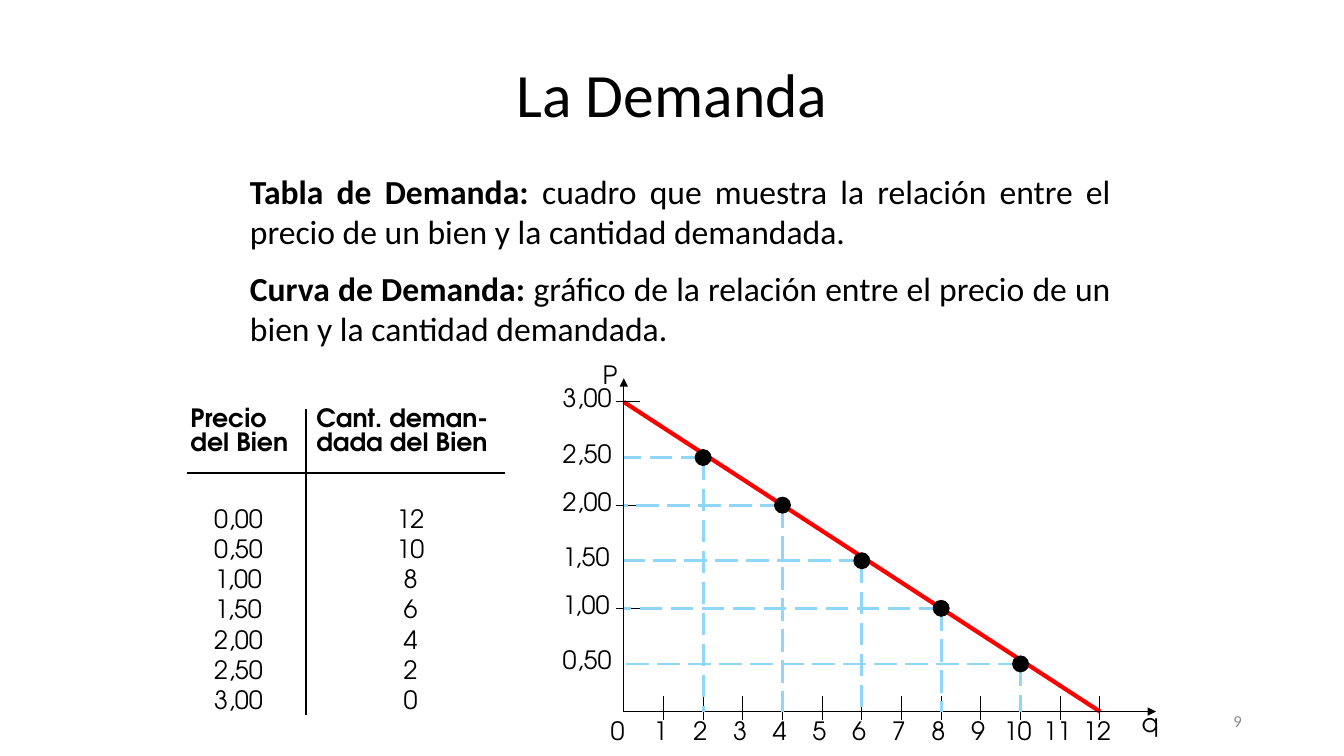
from pptx import Presentation, util as u
from pptx.dml.color import RGBColor
from pptx.enum import shapes, text
from pptx.enum.dml import MSO_LINE
from pptx.oxml.ns import qn
from lxml import etree

TITLE = "La Demanda"
DEFINITIONS = [
    [("Tabla de Demanda: ", True),
     ("cuadro que muestra la relación entre el precio de un bien y la cantidad demandada.", False)],
    [("Curva de Demanda: ", True),
     ("gráfico de la relación entre el precio de un bien y la cantidad demandada.", False)],
]
HEADER = ("Precio del Bien", "Cant. deman-dada del Bien")
DEMAND = [(0, 12), (0.5, 10), (1, 8), (1.5, 6), (2, 4), (2.5, 2), (3, 0)]
PAGE = "9"

BLACK, RED, BLUE, GREY = "000000", "FF0000", "8FD6F9", "8C8C8C"
SANS, GEOMETRIC = "Calibri", "TeX Gyre Adventor"
ALIGN, ANCHOR = text.PP_ALIGN, text.MSO_ANCHOR
X0, Y0, X_UNIT, Y_UNIT = 15.72, 17.93, 1, 2.6
MAX_Q = 12

prs = Presentation()
prs.slide_width, prs.slide_height = u.Cm(33.87), u.Cm(19.05)
s = prs.slides.add_slide(prs.slide_layouts[6])


def color(value):
    return RGBColor.from_string(value)


def money(price):
    return f"{price:.2f}".replace(".", ",")


def write(tf, paragraphs, size=18, font=GEOMETRIC, fill=BLACK, align=ALIGN.LEFT,
          bold=False, gap=0, tabs=()):
    if isinstance(paragraphs, str):
        paragraphs = [[(paragraphs, bold)]]
    tf.word_wrap = True
    for i, runs in enumerate(paragraphs):
        p = tf.add_paragraph() if i else tf.paragraphs[0]
        p.alignment = align
        if i:
            p.space_before = u.Pt(gap)
        if tabs:
            stops = etree.SubElement(p._p.get_or_add_pPr(), qn("a:tabLst"))
            for stop in tabs:
                etree.SubElement(stops, qn("a:tab"), pos=str(u.Cm(stop)), algn="ctr")
        for words, strong in runs:
            r = p.add_run()
            r.text = words
            r.font.size, r.font.name, r.font.bold = u.Pt(size), font, strong
            r.font.color.rgb = color(fill)


def box(x, y, w, h, paragraphs, anchor=ANCHOR.TOP, **style):
    tf = s.shapes.add_textbox(*map(u.Cm, (x, y, w, h))).text_frame
    tf.vertical_anchor = anchor
    write(tf, paragraphs, **style)


def line(x1, y1, x2, y2, stroke=BLACK, width=0.75, dashed=False, arrow=False):
    sp = s.shapes.add_connector(shapes.MSO_CONNECTOR.STRAIGHT, *map(u.Cm, (x1, y1, x2, y2)))
    sp.line.color.rgb, sp.line.width = color(stroke), u.Pt(width)
    if dashed:
        sp.line.dash_style = MSO_LINE.LONG_DASH
    if arrow:
        etree.SubElement(sp.line._get_or_add_ln(), qn("a:tailEnd"), type="triangle")
    etree.SubElement(sp._element.spPr, qn("a:effectLst"))


def dot(x, y, d=0.4):
    sp = s.shapes.add_shape(shapes.MSO_SHAPE.OVAL, *map(u.Cm, (x - d / 2, y - d / 2, d, d)))
    sp.shadow.inherit = False
    sp.fill.solid()
    sp.fill.fore_color.rgb = sp.line.color.rgb = color(BLACK)
    sp.line.width = u.Pt(0.75)


def borders(cell, drawn):
    tcPr = cell._tc.get_or_add_tcPr()
    for side in "LRTB":
        ln = etree.SubElement(tcPr, qn(f"a:ln{side}"), w=str(u.Pt(1.5)))
        if side in drawn:
            paint = etree.SubElement(ln, qn("a:solidFill"))
            etree.SubElement(paint, qn("a:srgbClr"), val=BLACK)
        else:
            etree.SubElement(ln, qn("a:noFill"))
    cell.fill.background()


def q_x(quantity):
    return X0 + quantity * X_UNIT


def price_y(price):
    return Y0 - price * Y_UNIT + (0 if price == int(price) else 0.1)


box(5.51, 0.76, 22.86, 3.18, TITLE, anchor=ANCHOR.MIDDLE, size=44, font=SANS, align=ALIGN.CENTER)
box(6.05, 4.17, 22.2, 4.88, DEFINITIONS, size=24, font=SANS, align=ALIGN.JUSTIFY, gap=12)

rows = [HEADER] + [(money(price), str(quantity)) for price, quantity in DEMAND]
heights = [1.6, 1.52] + [0.76] * (len(DEMAND) - 1)
widths = (3, 5)
table = s.shapes.add_table(len(rows), 2, *map(u.Cm, (4.72, 10.31, sum(widths), sum(heights)))).table
table.first_row = table.horz_banding = False
for column, width in zip(table.columns, widths):
    column.width = u.Cm(width)
for i, (row, height) in enumerate(zip(rows, heights)):
    table.rows[i].height = u.Cm(height)
    for j, words in enumerate(row):
        cell = table.cell(i, j)
        cell.margin_top = cell.margin_bottom = 0
        cell.margin_left = u.Cm((0.08, 0.25)[j])
        cell.margin_right = u.Cm((0.5 if i else 0.2, 0)[j])
        cell.vertical_anchor = ANCHOR.BOTTOM if i else ANCHOR.TOP
        write(cell.text_frame, words, bold=i == 0, align=ALIGN.CENTER if i else ALIGN.LEFT)
        borders(cell, "RL"[j] + {0: "B", 1: "T"}.get(i, ""))

line(q_x(0), price_y(3), q_x(MAX_Q), price_y(0), stroke=RED, width=3)
line(X0, Y0, X0, 9.53, arrow=True)
line(X0, Y0, 29.13, Y0, arrow=True)
box(28.52, 17.7, 0.89, 1.02, "q")
box(14.94, 8.92, 0.79, 1.02, "P")

for quantity in range(1, MAX_Q + 1):
    line(q_x(quantity), 17.53, q_x(quantity), 18.14)
box(15.14, 17.91, 14.2, 1.02, "\t".join(map(str, range(MAX_Q + 1))),
    tabs=[0.26 + quantity * X_UNIT for quantity in range(1, MAX_Q + 1)])

for price, quantity in DEMAND[1:]:
    x, y = q_x(quantity), price_y(price)
    box(13.93, y - 0.61, 1.8, 1.02, money(price))
    if price == int(price):
        line(15.52, y, 16.13, y)
    if quantity:
        line(x, y, X0, y, stroke=BLUE, width=2, dashed=True)
        line(x, y, x, Y0, stroke=BLUE, width=2, dashed=True)
        dot(x, y)

box(23.93, 17.65, 7.62, 1.02, PAGE, anchor=ANCHOR.MIDDLE, size=12, font=SANS, fill=GREY, align=ALIGN.RIGHT)

prs.save("out.pptx")
